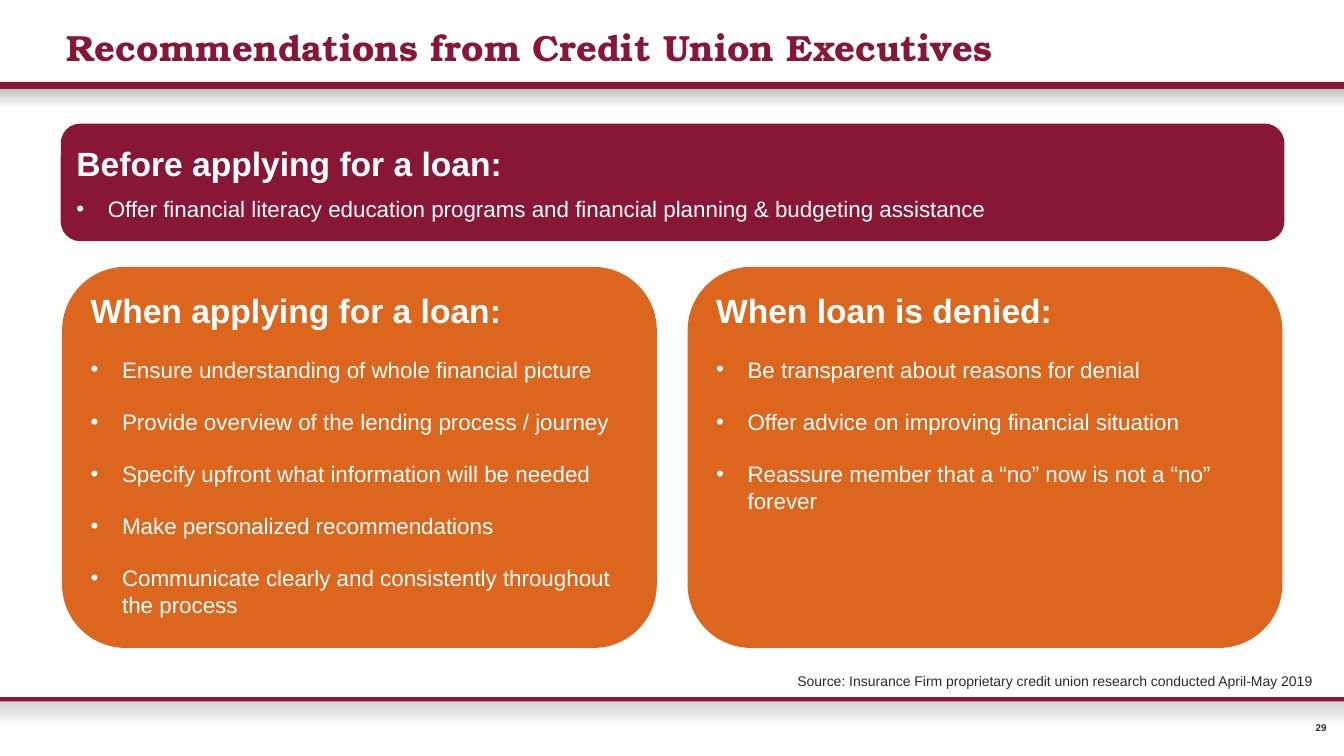
import pptx
import pptx.dml.color
import pptx.enum.shapes
import pptx.enum.text
import pptx.util
from dataclasses import dataclass
from lxml import etree

Pt = pptx.util.Pt
Align = pptx.enum.text.PP_ALIGN
Anchor = pptx.enum.text.MSO_ANCHOR
Preset = pptx.enum.shapes.MSO_SHAPE


@dataclass
class Theme:
    maroon: str = "881635"
    orange: str = "DC661D"
    white: str = "FFFFFF"
    ink: str = "292934"
    top_shade: str = "C0C0C0"
    bottom_shade: str = "CFCFCF"
    title_font: str = "TeX Gyre Bonum"
    body_font: str = "Arial"
    title_size: float = 26
    heading_size: float = 24
    body_size: float = 16
    source_size: float = 10
    number_size: float = 7


def rgb(color):
    return pptx.dml.color.RGBColor.from_string(color)


class Deck:
    def __init__(self, theme, width, height):
        self.theme = theme
        self.width = width
        self.presentation = pptx.Presentation()
        self.presentation.slide_width = Pt(width)
        self.presentation.slide_height = Pt(height)
        self.slide = self.presentation.slides.add_slide(self.presentation.slide_layouts[6])

    def shape(self, preset, left, top, width, height):
        shape = self.slide.shapes.add_shape(preset, Pt(left), Pt(top), Pt(width), Pt(height))
        shape.shadow.inherit = False
        shape.line.fill.background()
        return shape

    def fill(self, shape, color):
        shape.fill.solid()
        shape.fill.fore_color.rgb = rgb(color)

    def rule(self, top, height):
        self.fill(self.shape(Preset.RECTANGLE, 0, top, self.width, height), self.theme.maroon)

    def fade(self, top, height, shade):
        band = self.shape(Preset.RECTANGLE, 0, top, self.width, height)
        band.fill.gradient()
        band.fill.gradient_angle = 270
        for stop, color in zip(band.fill.gradient_stops, (shade, self.theme.white)):
            stop.color.rgb = rgb(color)

    def style(self, paragraph, size, color, bold=False, font=None):
        for run in paragraph.runs:
            run.font.name = font or self.theme.body_font
            run.font.size = Pt(size)
            run.font.bold = bold
            run.font.color.rgb = rgb(color)

    def text(self, words, left, top, width, height, size, color, bold=False, font=None,
             align=Align.LEFT, insets=(7.2, 3.6, 7.2, 3.6)):
        box = self.slide.shapes.add_textbox(Pt(left), Pt(top), Pt(width), Pt(height))
        frame = box.text_frame
        frame.word_wrap = True
        frame.vertical_anchor = Anchor.MIDDLE
        (frame.margin_left, frame.margin_top,
         frame.margin_right, frame.margin_bottom) = map(Pt, insets)
        frame.text = words
        frame.paragraphs[0].alignment = align
        self.style(frame.paragraphs[0], size, color, bold, font)

    def card(self, heading, advice, left, top, width, height, color, gap, anchor):
        card = self.shape(Preset.ROUNDED_RECTANGLE, left, top, width, height)
        self.fill(card, color)
        frame = card.text_frame
        frame.word_wrap = True
        frame.vertical_anchor = anchor
        frame.text = heading
        frame.paragraphs[0].alignment = Align.LEFT
        self.style(frame.paragraphs[0], self.theme.heading_size, self.theme.white, bold=True)
        for words in advice:
            self.bullet(frame.add_paragraph(), words, gap)

    def bullet(self, paragraph, words, gap):
        paragraph.text = words
        paragraph.alignment = Align.LEFT
        paragraph.space_before = Pt(gap)
        properties = paragraph._p.get_or_add_pPr()
        properties.set("marL", str(Pt(22.5)))
        properties.set("indent", str(Pt(-22.5)))
        mark = etree.SubElement(properties, pptx.oxml.ns.qn("a:buFont"))
        mark.set("typeface", self.theme.body_font)
        mark = etree.SubElement(properties, pptx.oxml.ns.qn("a:buChar"))
        mark.set("char", "•")
        self.style(paragraph, self.theme.body_size, self.theme.white)


def main():
    theme = Theme()
    deck = Deck(theme, 960, 540)

    deck.fade(499.7, 19.4, theme.bottom_shade)
    deck.fade(63.4, 13.5, theme.top_shade)
    deck.rule(498, 3)
    deck.rule(58.5, 5)
    deck.text("29", 900, 515.5, 47.5, 8.6, theme.number_size, theme.ink, bold=True,
              align=Align.RIGHT, insets=(0, 0, 0, 0))
    deck.text("Recommendations from Credit Union Executives", 40.5, 14.4, 864, 39,
              theme.title_size, theme.maroon, bold=True, font=theme.title_font)

    deck.card("Before applying for a loan:",
              ["Offer financial literacy education programs and financial planning"
               " & budgeting assistance"],
              43.4, 88.3, 874, 84, theme.maroon, 9, Anchor.MIDDLE)

    stages = [
        ("When applying for a loan:", [
            "Ensure understanding of whole financial picture",
            "Provide overview of the lending process / journey",
            "Specify upfront what information will be needed",
            "Make personalized recommendations",
            "Communicate clearly and consistently throughout the process",
        ]),
        ("When loan is denied:", [
            "Be transparent about reasons for denial",
            "Offer advice on improving financial situation",
            "Reassure member that a “no” now is not a “no” forever",
        ]),
    ]
    for column, (heading, advice) in enumerate(stages):
        deck.card(heading, advice, 44.4 + 446.8 * column, 190.6, 424.8, 272.2,
                  theme.orange, 18, Anchor.TOP)

    deck.text("Source: Insurance Firm proprietary credit union research conducted April-May 2019",
              136, 477, 813.7, 19.4, theme.source_size, theme.ink,
              align=Align.RIGHT, insets=(7.2, 3.6, 12.6, 3.6))

    deck.presentation.save("out.pptx")


if __name__ == "__main__":
    main()
